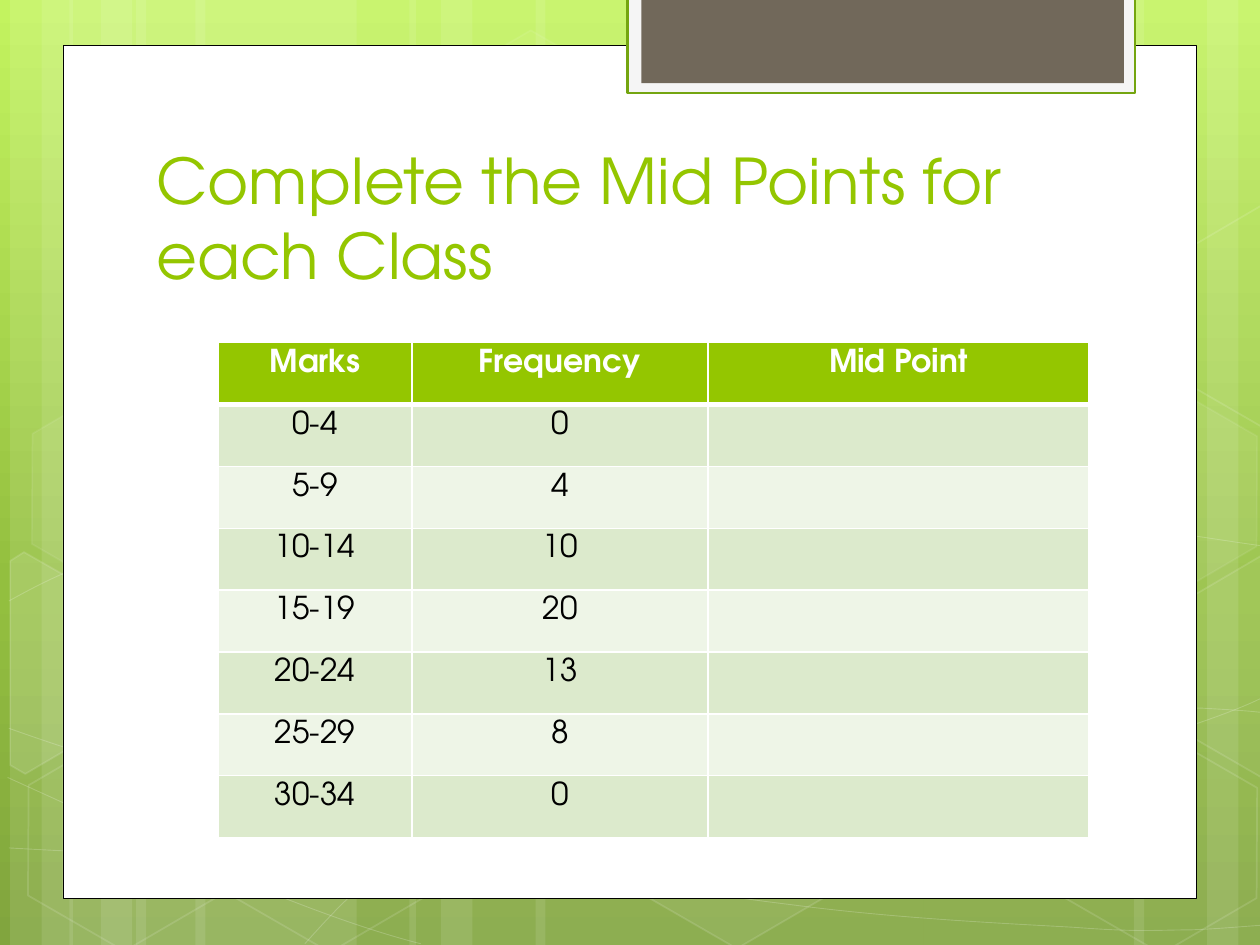
"""Build the slide that asks for the mid point of each class of marks."""
import copy
import math
from dataclasses import dataclass
from typing import Any, Optional

import pptx
import pptx.dml.color
import pptx.enum.shapes
import pptx.enum.text
import pptx.oxml
import pptx.oxml.ns
import pptx.util

Inches = pptx.util.Inches
Pt = pptx.util.Pt
Kind = pptx.enum.shapes.MSO_SHAPE
qn = pptx.oxml.ns.qn
FONT = "TeX Gyre Adventor"
WHITE, LIME, BLACK = "FFFFFF", "94C600", "000000"
TURN = 30


@dataclass
class Look:
    fill: Optional[str] = None
    solid: int = 100
    line: Optional[str] = None
    width: float = 1
    shade: int = 100


@dataclass
class Box:
    left: float
    top: float
    width: float
    height: float
    look: Look


@dataclass
class Hex:
    left: float
    top: float
    solid: int
    shade: int


@dataclass
class Part:
    hub: tuple[float, float]
    points: list[tuple[float, float]]
    solid: int


STRIPE = Look(WHITE, 10)
STRIPES = [
    Box(left, 0, width, 7.5, STRIPE)
    for left, width in [
        (1.08, 1.75), (0.08, 0.5), (0.33, 0.83), (1.55, 1.75), (0.55, 0.5), (0.8, 0.83),
        (7.33, 1.75), (9.58, 0.5), (9, 0.83), (4.25, 3.08), (3.25, 0.5), (3.5, 0.83),
    ]
]
CURVES = [
    [(0.07, 6.73),
     (0.61, 6.76), (1.15, 6.79), (1.9, 6.78), (2.65, 6.77), (3.58, 6.75), (4.58, 6.65),
     (5.58, 6.55), (7, 6.36), (7.92, 6.17), (8.83, 5.98), (9.77, 5.68), (10.07, 5.51)],
    [(0.07, 4.77),
     (0.36, 4.61), (0.65, 4.46), (1.21, 4.31), (1.78, 4.16), (2.59, 3.94), (3.47, 3.87),
     (4.36, 3.8), (5.44, 3.79), (6.54, 3.87), (7.64, 3.95), (9.47, 4.26), (10.07, 4.34)],
    [(0.06, 6.17), (1.27, 6.72), (2.47, 7.27), (3.34, 7.49)],
    [(0.07, 5.78),
     (0.38, 5.89), (0.7, 6), (1.28, 6.16), (1.86, 6.31), (2.73, 6.56), (3.57, 6.73),
     (4.4, 6.9), (5.45, 7.08), (6.28, 7.18), (7.11, 7.29), (8, 7.33), (8.53, 7.36),
     (9.05, 7.4), (9.19, 7.38), (9.45, 7.38), (9.71, 7.37), (9.89, 7.35), (10.07, 7.34)],
    [(2.42, 7.49),
     (2.6, 7.29), (2.78, 7.09), (3.02, 6.91), (3.26, 6.73), (3.6, 6.53), (3.88, 6.39),
     (4.16, 6.25), (4.33, 6.19), (4.7, 6.09), (5.06, 5.99), (5.73, 5.85), (6.08, 5.78),
     (6.44, 5.71), (6.49, 5.71), (6.8, 5.69), (7.11, 5.66), (7.6, 5.63), (7.94, 5.62),
     (8.29, 5.61), (8.86, 5.62), (8.86, 5.62), (8.86, 5.62), (9.53, 5.62), (9.53, 5.62),
     (9.71, 5.63), (9.88, 5.64), (9.97, 5.65), (10.06, 5.66), (10.03, 5.65), (10.06, 5.66)],
]
CELLS = [
    Hex(3.34, 0.36, 4, 8), Hex(4.97, 5.89, 6, 12), Hex(0.11, 5.91, 0, 12),
    Hex(0.14, 3.12, 7, 8), Hex(1.74, 5.92, 0, 12), Hex(7.53, 4.53, 10, 12),
    Hex(8.34, 5.93, 0, 12), Hex(8.34, 3.14, 7, 8),
]
PARTS = [
    Part((0.36, 5.35), [(0.08, 4.45), (0.19, 4.38), (0.96, 4.82), (0.95, 5.7), (0.2, 6.14), (0.08, 6.07)], 10),
    Part((9.85, 5.2), [(9.26, 4.85), (10.01, 4.41), (10.09, 4.46), (10.09, 6.13), (10.02, 6.17), (9.26, 5.73)], 4),
    Part((9.85, 2.41), [(9.26, 2.07), (10.01, 1.63), (10.1, 1.68), (10.09, 3.35), (10.02, 3.39), (9.26, 2.95)], 0),
]
PANELS = [
    Box(0.5, 0.36, 9, 6.77, Look(WHITE, line=BLACK, width=0.5)),
    Box(4.98, -0.02, 4.03, 0.76, Look("F5F5F5", line="74A510", width=1.25)),
    Box(5.09, -0.02, 3.83, 0.68, Look("71685A")),
]
ROWS = [
    ("Marks", "Frequency", "Mid Point"), ("0-4", "0", ""), ("5-9", "4", ""),
    ("10-14", "10", ""), ("15-19", "20", ""), ("20-24", "13", ""),
    ("25-29", "8", ""), ("30-34", "0", ""),
]


def tint(code: str) -> pptx.dml.color.RGBColor:
    return pptx.dml.color.RGBColor.from_string(code)


def paint(fill: Any, code: str) -> None:
    fill.solid()
    fill.fore_color.rgb = tint(code)


def fade(node: Any, share: int) -> None:
    if share < 100:
        color = node.find(qn("a:solidFill")).find(qn("a:srgbClr"))
        color.append(color.makeelement(qn("a:alpha"), {"val": str(share * 1000)}))


def dress(shape: Any, look: Look) -> None:
    shape.shadow.inherit = False
    props = shape.element.spPr
    if look.fill and look.solid:
        paint(shape.fill, look.fill)
        fade(props, look.solid)
    else:
        shape.fill.background()
    if look.line:
        paint(shape.line.fill, look.line)
        shape.line.width = Pt(look.width)
        fade(props.find(qn("a:ln")), look.shade)
    else:
        shape.line.fill.background()


def draw_box(slide: Any, box: Box) -> None:
    spot = map(Inches, (box.left, box.top, box.width, box.height))
    dress(slide.shapes.add_shape(Kind.RECTANGLE, *spot), box.look)


def draw_hex(slide: Any, cell: Hex) -> None:
    spot = map(Inches, (cell.left, cell.top, 1.75, 1.52))
    shape = slide.shapes.add_shape(Kind.HEXAGON, *spot)
    shape.adjustments[0] = 0.285
    shape.rotation = TURN
    dress(shape, Look(WHITE, cell.solid, WHITE, 1, cell.shade))


def draw_path(slide: Any, points: list, close: bool) -> Any:
    first, *rest = [(Inches(x), Inches(y)) for x, y in points]
    pen = slide.shapes.build_freeform(*first)
    pen.add_line_segments(rest, close=close)
    return pen.convert_to_shape()


def draw_curve(slide: Any, points: list) -> None:
    shape = draw_path(slide, points, False)
    lines = list(shape.element.iter(qn("a:lnTo")))
    for start in range(0, len(lines), 3):
        bend = lines[start].makeelement(qn("a:cubicBezTo"), {})
        lines[start].addprevious(bend)
        for line in lines[start:start + 3]:
            bend.append(line[0])
            line.getparent().remove(line)
    dress(shape, Look(line=WHITE, width=0.5, shade=20))


def draw_part(slide: Any, part: Part) -> None:
    (hx, hy), angle = part.hub, math.radians(TURN)
    cos, sin = math.cos(angle), math.sin(angle)
    flat = [(hx + (x - hx) * cos + (y - hy) * sin, hy - (x - hx) * sin + (y - hy) * cos)
            for x, y in part.points]
    shape = draw_path(slide, flat, True)
    shape.rotation = TURN
    dress(shape, Look(WHITE, part.solid, WHITE, 1, 12))


def style(para: Any, size: float, code: str, bold: bool = False) -> None:
    para.font.name, para.font.size, para.font.bold = FONT, Pt(size), bold
    para.font.color.rgb = tint(code)


def set_back(slide: Any) -> None:
    fill = slide.background.fill
    fill.gradient()
    fill.gradient_angle = 270
    stops = slide.element.find(".//" + qn("a:gsLst"))
    while len(stops) < 3:
        stops.append(copy.deepcopy(stops[-1]))
    for stop, (place, code) in zip(fill.gradient_stops, [(0, "C3F35F"), (0.62, "93BF3F"), (1, "81A53E")]):
        stop.position = place
        stop.color.rgb = tint(code)


def set_title(slide: Any) -> None:
    title = slide.shapes.title
    title.element.getparent().append(title.element)
    title.left, title.top, title.width, title.height = map(Inches, (1.14, 1.12, 7.68, 1.25))
    frame = title.text_frame
    frame.text = "Complete the Mid Points for each Class"
    frame.word_wrap = True
    frame.auto_size = pptx.enum.text.MSO_AUTO_SIZE.NONE
    frame.vertical_anchor = pptx.enum.text.MSO_ANCHOR.BOTTOM
    frame.paragraphs[0].alignment = pptx.enum.text.PP_ALIGN.LEFT
    style(frame.paragraphs[0], 36, LIME)


def edge(cell: Any, side: str, width: float, rank: int) -> None:
    xml = (f'<a:{side} {pptx.oxml.ns.nsdecls("a")} w="{Pt(width)}"><a:solidFill>'
           f'<a:srgbClr val="{WHITE}"/></a:solidFill></a:{side}>')
    cell._tc.get_or_add_tcPr().insert(rank, pptx.oxml.parse_xml(xml))


def add_grid(slide: Any) -> None:
    spot = map(Inches, (1.73, 2.72, 6.91, 3.93))
    grid = slide.shapes.add_table(len(ROWS), 3, *spot).table
    grid.horz_banding = False
    for column, width in zip(grid.columns, (1.54, 2.35, 3.02)):
        column.width = Inches(width)
    for r, row in enumerate(ROWS):
        head = r == 0
        for c, text in enumerate(row):
            cell = grid.cell(r, c)
            cell.text = text
            paint(cell.fill, LIME if head else "DCEACC" if r % 2 else "EEF5E7")
            para = cell.text_frame.paragraphs[0]
            para.alignment = pptx.enum.text.PP_ALIGN.CENTER
            style(para, 18, WHITE if head else BLACK, head)
            widths = (1, 1, 3 if r == 1 else 1, 3 if head else 1)
            for rank, (side, width) in enumerate(zip(("lnL", "lnR", "lnT", "lnB"), widths)):
                edge(cell, side, width, rank)


def main() -> None:
    deck = pptx.Presentation()
    deck.slide_width, deck.slide_height = Inches(10), Inches(7.5)
    slide = deck.slides.add_slide(deck.slide_layouts[5])
    set_back(slide)
    for draw, items in [
        (draw_box, STRIPES), (draw_curve, CURVES), (draw_hex, CELLS),
        (draw_part, PARTS), (draw_box, PANELS),
    ]:
        for item in items:
            draw(slide, item)
    set_title(slide)
    add_grid(slide)
    deck.save("out.pptx")


if __name__ == "__main__":
    main()
